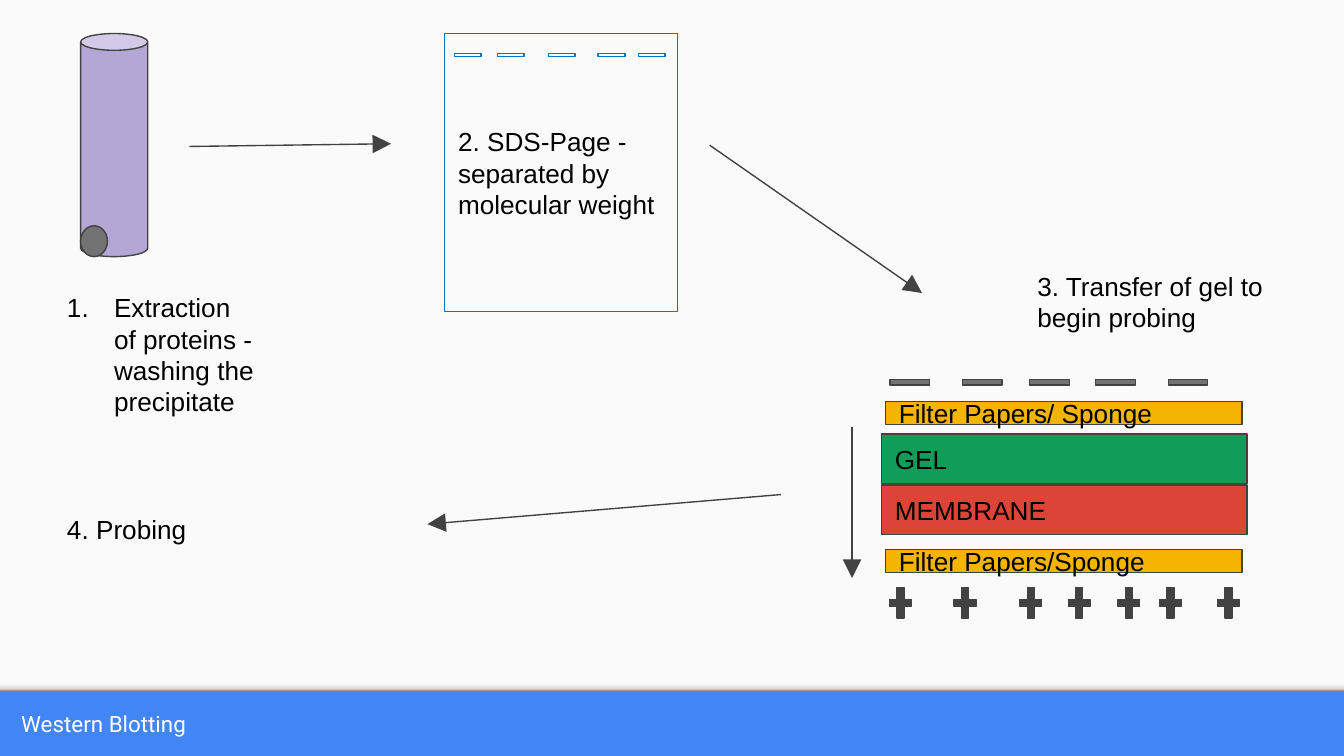
from copy import deepcopy
from dataclasses import dataclass
from typing import Optional

from lxml.etree import SubElement
from pptx import Presentation
from pptx.dml.color import RGBColor as Rgb
from pptx.enum.shapes import MSO_CONNECTOR as Conn, MSO_SHAPE as Kind
from pptx.enum.text import MSO_ANCHOR as Anchor, PP_ALIGN as Align
from pptx.oxml.ns import qn
from pptx.util import Inches, Pt

BLUE = Rgb(0x42, 0x85, 0xF4)
PALE = Rgb(0xFA, 0xFA, 0xFA)
DARK = Rgb(0x42, 0x42, 0x42)
GRAY = Rgb(0x73, 0x73, 0x73)
LILAC = Rgb(0xB4, 0xA7, 0xD6)
NAVY = Rgb(0x02, 0x77, 0xBD)
GREEN = Rgb(0x0F, 0x9D, 0x58)
RED = Rgb(0xDB, 0x44, 0x37)
GOLD = Rgb(0xF4, 0xB4, 0x00)
BLACK = Rgb(0, 0, 0)
WHITE = Rgb(0xFF, 0xFF, 0xFF)
FADE = [
    (0, Rgb(0xF9, 0xF9, 0xF9)),
    (0.36, Rgb(0xF9, 0xF9, 0xF9)),
    (0.8, Rgb(0xDE, 0xDE, 0xDE)),
    (1, Rgb(0x99, 0x99, 0x99)),
]


@dataclass
class Box:
    left: float
    top: float
    width: float
    height: float

    def emu(self) -> list:
        return [Inches(v) for v in (self.left, self.top, self.width, self.height)]


@dataclass
class Layer:
    text: str
    box: Box
    fill: Rgb


@dataclass
class Arrow:
    x1: float
    y1: float
    x2: float
    y2: float


@dataclass
class Row:
    kind: Kind
    lefts: list
    top: float
    width: float
    height: float
    fill: Rgb
    line: Rgb
    adjust: Optional[float] = None


def write(shape, text: str, anchor: Anchor, font: str = "Arial",
          size: float = 14, color: Rgb = BLACK) -> None:
    frame = shape.text_frame
    frame.word_wrap = True
    frame.vertical_anchor = anchor
    frame.margin_left = frame.margin_right = Inches(0.1)
    frame.margin_top = frame.margin_bottom = Inches(0.1)
    frame.text = text
    para = frame.paragraphs[0]
    para.alignment = Align.LEFT
    face = para.runs[0].font
    face.name, face.size, face.color.rgb = font, Pt(size), color


def draw(slide, kind: Kind, box: Box, fill: Rgb, line: Optional[Rgb] = DARK,
         adjust: Optional[float] = None):
    shape = slide.shapes.add_shape(kind, *box.emu())
    shape.shadow.inherit = False
    shape.fill.solid()
    shape.fill.fore_color.rgb = fill
    if line is None:
        shape.line.fill.background()
    else:
        shape.line.color.rgb = line
        shape.line.width = Pt(0.75)
    if adjust is not None:
        shape.adjustments[0] = adjust
    return shape


def repeat(slide, row: Row) -> None:
    for left in row.lefts:
        box = Box(left, row.top, row.width, row.height)
        draw(slide, row.kind, box, row.fill, row.line, row.adjust)


def label(slide, text: str, box: Box):
    shape = slide.shapes.add_textbox(*box.emu())
    write(shape, text, Anchor.TOP)
    return shape


def point(slide, arrow: Arrow) -> None:
    ends = [Inches(v) for v in (arrow.x1, arrow.y1, arrow.x2, arrow.y2)]
    link = slide.shapes.add_connector(Conn.STRAIGHT, *ends)
    link.line.color.rgb = DARK
    link.line.width = Pt(0.75)
    SubElement(link.line._get_or_add_ln(), qn("a:tailEnd"),
               type="triangle", w="lg", len="lg")
    SubElement(link._element.spPr, qn("a:effectLst"))


def number(shape) -> None:
    props = shape.text_frame.paragraphs[0]._p.get_or_add_pPr()
    props.set("marL", str(Inches(0.5)))
    props.set("indent", str(Inches(-0.35)))
    SubElement(props, qn("a:buFont"), typeface="Arial")
    SubElement(props, qn("a:buAutoNum"), type="arabicPeriod")


def shade(slide, box: Box) -> None:
    strip = draw(slide, Kind.RECTANGLE, box, PALE, None)
    strip.fill.gradient()
    strip.fill.gradient_angle = 270
    stops = strip._element.spPr.find(".//" + qn("a:gsLst"))
    while len(stops) < len(FADE):
        stops.append(deepcopy(stops[0]))
    for stop, (place, color) in zip(strip.fill.gradient_stops, FADE):
        stop.position = place
        stop.color.rgb = color


LAYERS = [
    Layer("GEL", Box(6.56, 3.23, 2.72, 0.37), GREEN),
    Layer("MEMBRANE", Box(6.56, 3.61, 2.72, 0.37), RED),
    Layer("Filter Papers/ Sponge", Box(6.59, 2.99, 2.65, 0.17), GOLD),
    Layer("Filter Papers/Sponge", Box(6.59, 4.09, 2.65, 0.17), GOLD),
]
ARROWS = [
    Arrow(1.41, 1.09, 2.91, 1.07),
    Arrow(5.28, 1.08, 6.86, 2.18),
    Arrow(6.34, 3.18, 6.34, 4.3),
    Arrow(5.81, 3.68, 3.18, 3.9),
]
WELLS = Row(Kind.RECTANGLE, [3.38, 3.7, 4.08, 4.45, 4.75],
            0.4, 0.2, 0.02, PALE, NAVY)
PLUSES = Row(Kind.MATH_PLUS, [6.59, 7.07, 7.56, 7.92, 8.29, 8.6, 9.03],
             4.33, 0.22, 0.31, DARK, DARK, 0.235)
MINUSES = Row(Kind.MATH_MINUS, [6.57, 7.11, 7.61, 8.1, 8.64],
              2.76, 0.4, 0.17, GRAY, DARK, 0.235)


def main() -> None:
    deck = Presentation()
    deck.slide_width = Inches(10)
    deck.slide_height = Inches(10) * 9 // 16
    slide = deck.slides.add_slide(deck.slide_layouts[6])
    slide.background.fill.solid()
    slide.background.fill.fore_color.rgb = BLUE

    draw(slide, Kind.RECTANGLE, Box(0, 0, 10, 5.14), PALE, None)
    shade(slide, Box(0, 5.06, 10, 0.08))
    title = slide.shapes.add_textbox(*Box(0.06, 5.14, 9.17, 0.49).emu())
    write(title, "Western Blotting", Anchor.MIDDLE, "Roboto", 12, WHITE)

    draw(slide, Kind.CAN, Box(0.6, 0.25, 0.5, 1.66), LILAC, adjust=0.25)
    number(label(slide, "Extraction of proteins - washing the precipitate",
                 Box(0.25, 2.07, 1.78, 0.93)))
    draw(slide, Kind.OVAL, Box(0.6, 1.68, 0.2, 0.23), GRAY)

    page = draw(slide, Kind.RECTANGLE, Box(3.31, 0.25, 1.73, 2.07), PALE, NAVY)
    write(page, "2. SDS-Page - separated by molecular weight", Anchor.MIDDLE)
    label(slide, "3. Transfer of gel to begin probing", Box(7.62, 1.91, 2.09, 0.54))
    label(slide, "4. Probing", Box(0.4, 3.72, 2.45, 0.93))

    for row in (WELLS, PLUSES, MINUSES):
        repeat(slide, row)
    for layer in LAYERS:
        shape = draw(slide, Kind.RECTANGLE, layer.box, layer.fill)
        write(shape, layer.text, Anchor.MIDDLE)
    for arrow in ARROWS:
        point(slide, arrow)
    deck.save("out.pptx")


if __name__ == "__main__":
    main()
